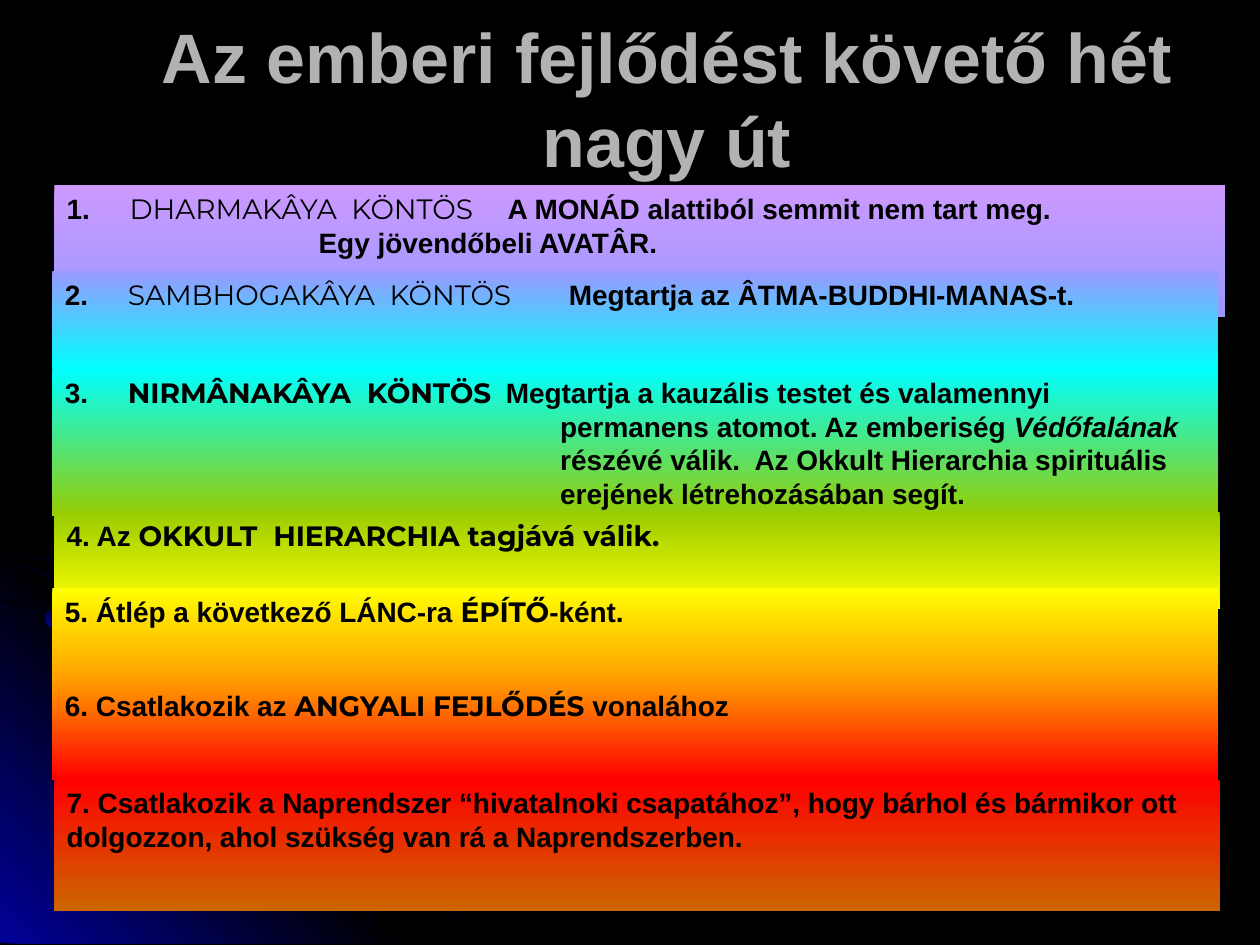
from typing import NamedTuple

from lxml.etree import SubElement
from pptx import Presentation
from pptx.dml.color import RGBColor
from pptx.enum.shapes import MSO_SHAPE
from pptx.enum.text import MSO_ANCHOR, MSO_AUTO_SIZE, PP_ALIGN
from pptx.oxml.ns import qn
from pptx.util import Pt

BLACK = RGBColor(0, 0, 0)
NAVY = RGBColor(0x01, 0x01, 0x99)
GREY = RGBColor(0xB2, 0xB2, 0xB2)
LILAC = RGBColor(0xCC, 0x99, 0xFF)
BLUE = RGBColor(0x99, 0x99, 0xFF)
CYAN = RGBColor(0x00, 0xFF, 0xFF)
GREEN = RGBColor(0x99, 0xCC, 0x00)
YELLOW = RGBColor(0xFF, 0xFF, 0x00)
ORANGE = RGBColor(0xFF, 0x99, 0x00)
RED = RGBColor(0xFF, 0x00, 0x00)
BROWN = RGBColor(0xCC, 0x66, 0x00)
ARIAL, MONT = "Arial", "Montserrat"
TABS = (22.3, 288)  # name column, meaning column


class Run(NamedTuple):
    text: str
    font: str = ARIAL
    bold: bool = True
    italic: bool = False


class Para(NamedTuple):
    runs: list[Run]
    indent: float = 0


class Row(NamedTuple):
    left: float
    top: float
    width: float
    height: float
    paras: list[Para]


class Dot(NamedTuple):
    left: float
    top: float
    size: float
    angle: int


Points = list[tuple[float, float]]

# Background arcs, as points along each lower edge
ARCS: list[Points] = [
    [(0, 315), (20, 319), (41, 323), (70, 332), (97, 344), (125, 359),
     (150, 376), (174, 395), (195, 417), (215, 441), (233, 467), (243, 484),
     (252, 502), (259, 520), (266, 539)],
    [(0, 343), (28, 353), (55, 365), (83, 380), (108, 397), (132, 416),
     (153, 438), (173, 462), (191, 488), (205, 514), (212, 527), (217, 539)],
    [(0, 320), (26, 329), (53, 342), (78, 356), (102, 373), (125, 392),
     (145, 414), (163, 436), (181, 462), (192, 480), (202, 500), (210, 520),
     (217, 539)],
]
WEDGE: Points = [(232, 539), (0, 539), (0, 307.5)]
DOTS = [Dot(26, 348, 11, 315), Dot(192, 485, 11.5, 45), Dot(98.5, 340.5, 15, 315)]

# Each row fades from its own shade to the next one
SHADES = [LILAC, BLUE, CYAN, GREEN, YELLOW, ORANGE, RED, BROWN]
ROWS = [
    Row(31, 106, 669, 75, [
        Para([Run("1.\t"), Run("DHARMAKÂYA  KÖNTÖS", MONT, False),
              Run("\tA MONÁD alattiból semmit nem tart meg.")]),
        Para([Run("Egy jövendőbeli AVATÂR.")], 144)]),
    Row(30, 155, 666, 56, [
        Para([Run("2.\t"), Run("SAMBHOGAKÂYA  KÖNTÖS", MONT, False),
              Run("\tMegtartja az ÂTMA-BUDDHI-MANAS-t.")])]),
    Row(30, 211, 666, 84, [
        Para([Run("3.\t"), Run("NIRMÂNAKÂYA  KÖNTÖS", MONT),
              Run("\tMegtartja a kauzális testet és valamennyi")]),
        Para([Run("permanens atomot. Az emberiség "),
              Run("Védőfalának", italic=True)], 283),
        Para([Run("részévé válik.  Az Okkult Hierarchia spirituális")], 283),
        Para([Run("erejének létrehozásában segít.")], 283)]),
    Row(31, 292.5, 666, 55.5, [
        Para([Run("4. Az "), Run("OKKULT  HIERARCHIA tagjává válik.", MONT)])]),
    Row(30, 336, 666, 55.5, [
        Para([Run("5. Átlép a következő LÁNC-ra "), Run("ÉPÍTŐ", MONT),
              Run("-ként.")])]),
    Row(30, 390, 666, 55.5, [
        Para([Run("6. Csatlakozik az "), Run("ANGYALI FEJLŐDÉS", MONT),
              Run(" vonalához")])]),
    Row(31, 445.5, 666, 75, [
        Para([Run("7. Csatlakozik a Naprendszer “hivatalnoki csapatához”, "
                  "hogy bárhol és bármikor ott dolgozzon, ahol szükség van rá "
                  "a Naprendszerben.")])]),
]


def style(item, form: dict) -> None:
    for key, value in form.items():
        setattr(item, key, value)


def fade(shape, shades: list[RGBColor], angle: int) -> None:
    """Fill with evenly spaced shades; the angle runs clockwise."""
    shape.shadow.inherit = False
    shape.line.fill.background()
    shape.fill.gradient()
    shape.fill.gradient_angle = (360 - angle) % 360
    stops = shape._element.spPr.find(qn("a:gradFill")).find(qn("a:gsLst"))
    for old in list(stops):
        stops.remove(old)
    for i, shade in enumerate(shades):
        stop = SubElement(stops, qn("a:gs"), pos=str(100000 * i // (len(shades) - 1)))
        SubElement(stop, qn("a:srgbClr"), val=str(shade))


def outline(slide, points: Points, shades: list[RGBColor], angle: int) -> None:
    (x, y), *rest = [(Pt(a), Pt(b)) for a, b in points]
    form = slide.shapes.build_freeform(x, y)
    form.add_line_segments(rest, close=True)
    fade(form.convert_to_shape(), shades, angle)


def arc(slide, edge: Points) -> None:
    back = [(x + 1, y - 1.2) for x, y in reversed(edge)]
    outline(slide, edge + back, [BLACK, NAVY, BLACK], 45)


def dot(slide, spot: Dot) -> None:
    shape = slide.shapes.add_shape(
        MSO_SHAPE.OVAL, Pt(spot.left), Pt(spot.top), Pt(spot.size), Pt(spot.size))
    fade(shape, [NAVY, BLACK], spot.angle)


def write(part, para: Para) -> None:
    part.alignment = PP_ALIGN.LEFT
    props = part._p.get_or_add_pPr()
    props.set("marL", str(Pt(para.indent)))
    props.set("indent", "0")
    if any("\t" in run.text for run in para.runs):
        tabs = SubElement(props, qn("a:tabLst"))
        for tab in TABS:
            SubElement(tabs, qn("a:tab"), pos=str(Pt(tab)), algn="l")
    for run in para.runs:
        piece = part.add_run()
        piece.text = run.text
        style(piece.font, {"name": run.font, "size": Pt(16),
                           "bold": run.bold, "italic": run.italic})
        piece.font.color.rgb = BLACK


def band(slide, row: Row, shades: list[RGBColor]) -> None:
    shape = slide.shapes.add_shape(
        MSO_SHAPE.RECTANGLE, Pt(row.left), Pt(row.top), Pt(row.width), Pt(row.height))
    fade(shape, shades, 90)
    frame = shape.text_frame
    style(frame, {"word_wrap": True, "vertical_anchor": MSO_ANCHOR.TOP})
    for i, para in enumerate(row.paras):
        write(frame.add_paragraph() if i else frame.paragraphs[0], para)


def head(slide) -> None:
    title = slide.shapes.title
    style(title, {"left": Pt(42), "top": Pt(26), "width": Pt(678), "height": Pt(60)})
    frame = title.text_frame
    frame.text = "Az emberi fejlődést követő hét nagy út"
    style(frame, {"word_wrap": True, "auto_size": MSO_AUTO_SIZE.NONE,
                  "vertical_anchor": MSO_ANCHOR.MIDDLE})
    line = frame.paragraphs[0]
    line.alignment = PP_ALIGN.CENTER
    font = line.runs[0].font
    style(font, {"name": ARIAL, "size": Pt(40), "bold": True})
    font.color.rgb = GREY


def main() -> None:
    deck = Presentation()
    style(deck, {"slide_width": Pt(720), "slide_height": Pt(540)})
    slide = deck.slides.add_slide(deck.slide_layouts[5])
    slide.background.fill.solid()
    slide.background.fill.fore_color.rgb = BLACK

    # Background glow
    arc(slide, ARCS[0])
    outline(slide, WEDGE, [NAVY, BLACK, NAVY], 315)
    for edge in ARCS[1:]:
        arc(slide, edge)
    for spot in DOTS:
        dot(slide, spot)

    # Title and the seven paths
    head(slide)
    for row, first, last in zip(ROWS, SHADES, SHADES[1:]):
        band(slide, row, [first, last])
    deck.save("out.pptx")


if __name__ == "__main__":
    main()
